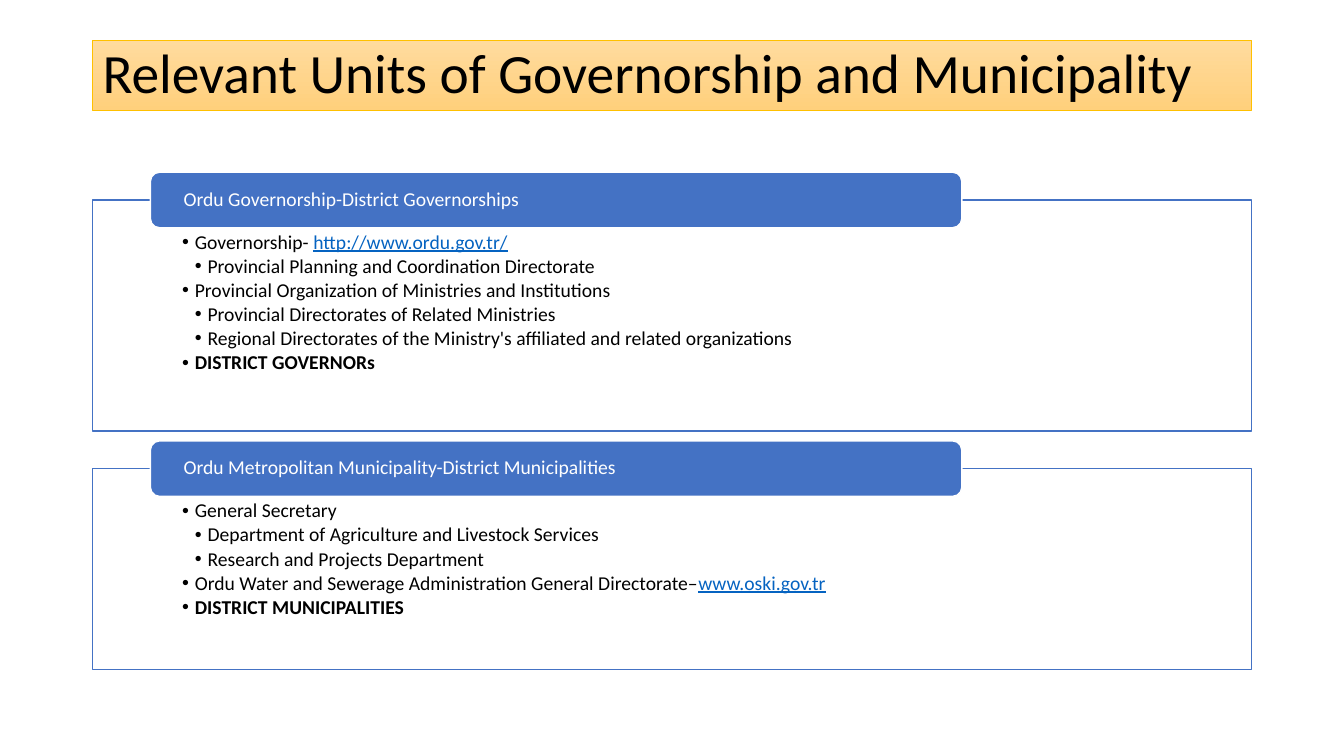
from dataclasses import dataclass

from lxml.etree import SubElement
from pptx import Presentation
from pptx.dml.color import RGBColor
from pptx.enum.shapes import MSO_SHAPE
from pptx.enum.text import MSO_ANCHOR, MSO_AUTO_SIZE, PP_ALIGN
from pptx.oxml.ns import qn
from pptx.util import Cm, Pt

BLACK = RGBColor(0x00, 0x00, 0x00)
WHITE = RGBColor(0xFF, 0xFF, 0xFF)
BLUE = RGBColor(0x44, 0x72, 0xC4)
LINK_BLUE = RGBColor(0x05, 0x63, 0xC1)
GOLD = RGBColor(0xFF, 0xC0, 0x00)
PALE_ORANGE = RGBColor(0xFF, 0xDB, 0x9E)
ORANGE = RGBColor(0xFF, 0xD0, 0x7C)

FONT = "Calibri"
LEFT, WIDTH = 2.33, 29.21
TAB_LEFT, TAB_WIDTH, TAB_HEIGHT = 3.79, 20.45, 1.4
INDENT = 0.32

TITLE_FRAME = dict(auto_size=MSO_AUTO_SIZE.NONE, word_wrap=True,
                   vertical_anchor=MSO_ANCHOR.MIDDLE,
                   margin_top=0, margin_bottom=0)
LIST_FRAME = dict(auto_size=MSO_AUTO_SIZE.NONE, word_wrap=True,
                  vertical_anchor=MSO_ANCHOR.TOP,
                  margin_left=Cm(2.26), margin_right=Cm(2.26),
                  margin_top=Cm(0.81), margin_bottom=Cm(0.28))
TAB_FRAME = dict(word_wrap=True, vertical_anchor=MSO_ANCHOR.MIDDLE,
                 margin_left=Cm(0.77), margin_right=Cm(0.77),
                 margin_top=0, margin_bottom=0)
LINE_FORMAT = dict(alignment=PP_ALIGN.LEFT, line_spacing=0.9,
                   space_before=Pt(0))
LIST_LINE_FORMAT = LINE_FORMAT | dict(space_after=Pt(2.1))


@dataclass(frozen=True)
class Item:
    text: str
    level: int = 0
    address: str = ""
    bold: bool = False


@dataclass(frozen=True)
class Unit:
    heading: str
    top: float
    height: float
    items: tuple[Item, ...]


UNITS = (
    Unit("Ordu Governorship-District Governorships", 5.04, 5.82, (
        Item("Governorship- ", address="http://www.ordu.gov.tr/"),
        Item("Provincial Planning and Coordination Directorate", 1),
        Item("Provincial Organization of Ministries and Institutions"),
        Item("Provincial Directorates of Related Ministries", 1),
        Item("Regional Directorates of the Ministry's affiliated and related organizations", 1),
        Item("DISTRICT GOVERNORs", bold=True),
    )),
    Unit("Ordu Metropolitan Municipality-District Municipalities", 11.81, 5.06, (
        Item("General Secretary"),
        Item("Department of Agriculture and Livestock Services", 1),
        Item("Research and Projects Department", 1),
        Item("Ordu Water and Sewerage Administration General Directorate–",
             address="www.oski.gov.tr"),
        Item("DISTRICT MUNICIPALITIES", bold=True),
    )),
)


def apply(target, values: dict) -> None:
    for name, value in values.items():
        setattr(target, name, value)


def place(shape, left: float, top: float, width: float, height: float) -> None:
    apply(shape, dict(left=Cm(left), top=Cm(top),
                      width=Cm(width), height=Cm(height)))


def outline(shape, color: RGBColor, width: float) -> None:
    shape.line.color.rgb = color
    shape.line.width = Pt(width)


def add_run(paragraph, text: str, color: RGBColor, size: float = 14,
            bold: bool = False, underline: bool = False) -> None:
    run = paragraph.add_run()
    run.text = text
    apply(run.font, dict(name=FONT, size=Pt(size), bold=bold, underline=underline))
    run.font.color.rgb = color


def add_item(paragraph, item: Item) -> None:
    apply(paragraph, LIST_LINE_FORMAT | dict(level=item.level))
    properties = paragraph._p.get_or_add_pPr()
    properties.set("marL", str(Cm(INDENT * (item.level + 1))))
    properties.set("indent", str(-Cm(INDENT)))
    SubElement(properties, qn("a:buChar"), char="•")
    add_run(paragraph, item.text, BLACK, bold=item.bold)
    if item.address:
        add_run(paragraph, item.address, LINK_BLUE, underline=True)


def fill_title(title) -> None:
    place(title, LEFT, 1.02, WIDTH, 1.76)
    title.fill.gradient()
    title.fill.gradient_angle = 270
    for stop, color in zip(title.fill.gradient_stops, (PALE_ORANGE, ORANGE)):
        stop.color.rgb = color
    outline(title, GOLD, 0.5)
    apply(title.text_frame, TITLE_FRAME)
    line = title.text_frame.paragraphs[0]
    apply(line, LINE_FORMAT)
    add_run(line, "Relevant Units of Governorship and Municipality", BLACK, 39.6)


def fill_list(body, unit: Unit) -> None:
    place(body, LEFT, unit.top, WIDTH, unit.height)
    body.fill.solid()
    body.fill.fore_color.rgb = WHITE
    white = body._element.spPr.find(qn("a:solidFill"))[0]
    SubElement(white, qn("a:alpha"), val="90000")
    outline(body, BLUE, 1)
    frame = body.text_frame
    apply(frame, LIST_FRAME)
    for number, item in enumerate(unit.items):
        add_item(frame.add_paragraph() if number else frame.paragraphs[0], item)


def add_tab(slide, unit: Unit) -> None:
    tab = slide.shapes.add_shape(
        MSO_SHAPE.ROUNDED_RECTANGLE, Cm(TAB_LEFT), Cm(unit.top - TAB_HEIGHT / 2),
        Cm(TAB_WIDTH), Cm(TAB_HEIGHT))
    tab.shadow.inherit = False
    tab.fill.solid()
    tab.fill.fore_color.rgb = BLUE
    outline(tab, WHITE, 1)
    apply(tab.text_frame, TAB_FRAME)
    line = tab.text_frame.paragraphs[0]
    apply(line, LINE_FORMAT)
    add_run(line, unit.heading, WHITE)


def main() -> None:
    deck = Presentation()
    deck.slide_width, deck.slide_height = Cm(33.87), Cm(19.05)
    slide = deck.slides.add_slide(deck.slide_layouts.get_by_name("Two Content"))

    # Title band
    title, *bodies = slide.placeholders
    fill_title(title)

    # Framed list of each unit, with its heading tab on the top edge
    for body, unit in zip(bodies, UNITS):
        fill_list(body, unit)
        add_tab(slide, unit)

    deck.save("out.pptx")


if __name__ == "__main__":
    main()
